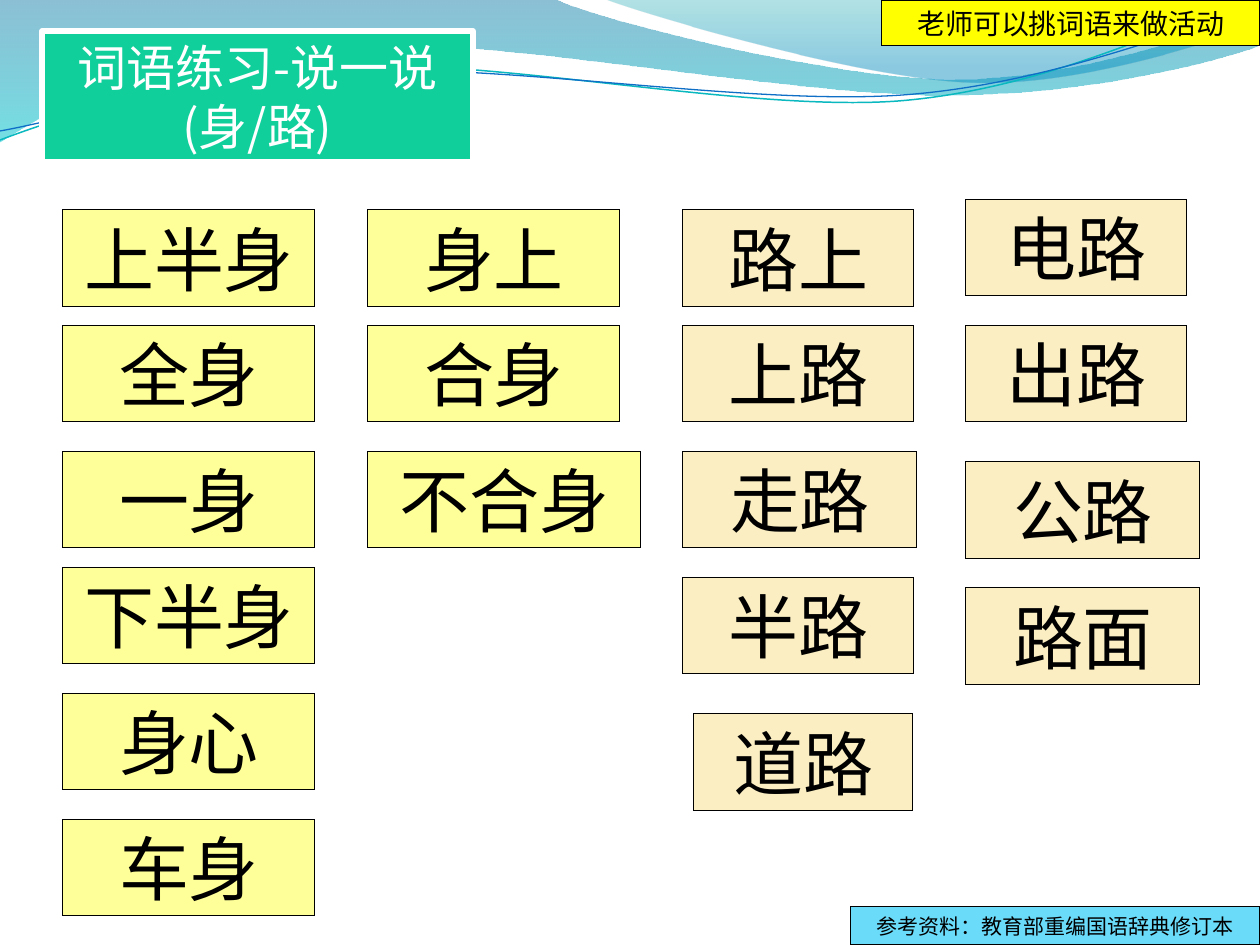
import pptx
import pptx.util
import pptx.dml.color
import pptx.enum.shapes
import pptx.enum.text
import pptx.oxml
import pptx.oxml.ns

PX = 914400 / 126
FACE = "Noto Sans CJK SC"
SPACE = pptx.oxml.ns.nsdecls("a")
YELLOW, CREAM = "FFFF99", "FAEEC2"
FRAME = {
    "word_wrap": True,
    "auto_size": pptx.enum.text.MSO_AUTO_SIZE.SHAPE_TO_FIT_TEXT,
    "vertical_anchor": pptx.enum.text.MSO_ANCHOR.TOP,
}
WORDS = [
    (YELLOW, 63, 252, [("上半身", 210), ("全身", 325), ("一身", 451),
                       ("下半身", 567), ("身心", 693), ("车身", 819)]),
    (YELLOW, 368, 252, [("身上", 210), ("合身", 325)]),
    (YELLOW, 368, 273, [("不合身", 451)]),
    (CREAM, 683, 231, [("路上", 210), ("上路", 325), ("半路", 577)]),
    (CREAM, 683, 234, [("走路", 451)]),
    (CREAM, 693, 220, [("道路", 714)]),
    (CREAM, 966, 221, [("电路", 199), ("出路", 325)]),
    (CREAM, 966, 234, [("公路", 462), ("路面", 588)]),
]
WAVES = [
    ([(0, 0), (554, -1), (600, 21, 837, 79, 955, 79),
      (1075, 79, 1207, 33, 1260, 11), (1261, 45),
      (1239, 55, 1096, 96, 940, 95), (783, 95, 481, 35, 324, 43),
      (163, 45, 58, 105, -1, 142)],
     [(0, "0074A1", 45), (100, "00C6CF", 55)]),
    ([(604, -1), (641, 14, 859, 78, 969, 82),
      (1079, 87, 1211, 40, 1260, 26), (1260, 0)],
     [(0, "00A1A9", 30), (80, "008BBF", 45)]),
]
CURVES = [
    ([(0, 140), (60, 117, 199, 72, 349, 66), (498, 59, 747, 112, 898, 101),
      (1050, 89, 1182, 19, 1257, -3)], "0AB8BF", 0.85),
    ([(0, 131), (59, 121, 207, 77, 357, 71), (508, 64, 752, 106, 903, 95),
      (1053, 84, 1186, 26, 1260, 8)], "0F6FC6", 0.75),
]


def px(num):
    """Turn pixels into EMU."""
    return pptx.util.Emu(round(num * PX))


def color(code):
    """Turn a hex string into a colour."""
    return pptx.dml.color.RGBColor.from_string(code)


def apply(item, values):
    """Set each attribute named in a dict."""
    for name, value in values.items():
        setattr(item, name, value)


def plain(shape):
    """Drop the theme style of a shape."""
    shape.element.remove(shape.element.find(pptx.oxml.ns.qn("p:style")))
    return shape


def bend(shape, step):
    """Return a cubic segment in the shape's own units."""
    pairs = zip(step[::2], step[1::2])
    marks = "".join(
        f'<a:pt x="{px(x) - shape.left}" y="{px(y) - shape.top}"/>' for x, y in pairs)
    return pptx.oxml.parse_xml(f"<a:cubicBezTo {SPACE}>{marks}</a:cubicBezTo>")


def outline(slide, steps, close):
    """Draw a freeform of straight and cubic segments."""
    first, *rest = [(px(step[-2]), px(step[-1])) for step in steps]
    pen = slide.shapes.build_freeform(*first)
    pen.add_line_segments(rest, close=close)
    shape = plain(pen.convert_to_shape())
    lines = list(shape.element.iter(pptx.oxml.ns.qn("a:lnTo")))
    for line, step in zip(lines, steps[1:]):
        if len(step) == 6:
            line.getparent().replace(line, bend(shape, step))
    return shape


def wave(slide, steps, stops):
    """Draw a band with a see-through vertical gradient."""
    shape = outline(slide, steps, True)
    shape.line.fill.background()
    marks = "".join(
        f'<a:gs pos="{pos * 1000}"><a:srgbClr val="{code}">'
        f'<a:alpha val="{alpha * 1000}"/></a:srgbClr></a:gs>'
        for pos, code, alpha in stops)
    fill = pptx.oxml.parse_xml(
        f'<a:gradFill {SPACE} rotWithShape="1"><a:gsLst>{marks}</a:gsLst>'
        '<a:lin ang="5400000" scaled="1"/></a:gradFill>')
    shape.element.spPr.find(pptx.oxml.ns.qn("a:custGeom")).addnext(fill)


def curve(slide, steps, code, width):
    """Draw an open curved line."""
    shape = outline(slide, steps, False)
    shape.fill.background()
    shape.line.color.rgb = color(code)
    shape.line.width = pptx.util.Pt(width)


def card(slide, text, box, fill, size, ink="000000", edge="000000", width=None):
    """Draw a filled rectangle with centred text."""
    shape = plain(slide.shapes.add_shape(
        pptx.enum.shapes.MSO_SHAPE.RECTANGLE, *map(px, box)))
    shape.fill.solid()
    shape.fill.fore_color.rgb = color(fill)
    shape.line.color.rgb = color(edge)
    if width:
        shape.line.width = pptx.util.Pt(width)
    apply(shape.text_frame, FRAME)
    para = shape.text_frame.paragraphs[0]
    para.alignment = pptx.enum.text.PP_ALIGN.CENTER
    run = para.add_run()
    run.text = text
    apply(run.font, {"name": FACE, "size": pptx.util.Pt(size)})
    run.font.color.rgb = color(ink)
    east = pptx.oxml.parse_xml(f'<a:ea {SPACE} typeface="{FACE}"/>')
    run.font._element.find(pptx.oxml.ns.qn("a:latin")).addnext(east)


def main():
    """Build and save the slide."""
    deck = pptx.Presentation()
    apply(deck, {"slide_width": px(1260), "slide_height": px(945)})
    slide = deck.slides.add_slide(deck.slide_layouts[6])
    for steps, stops in WAVES:
        wave(slide, steps, stops)
    for steps, code, width in CURVES:
        curve(slide, steps, code, width)
    for fill, left, width, items in WORDS:
        for text, top in items:
            card(slide, text, (left, top, width, 97), fill, 40)
    card(slide, "词语练习-说一说(身/路)", (42, 31, 431, 131),
         "10CF9B", 28, "FFFFFF", "FFFFFF", 3)
    card(slide, "参考资料：教育部重编国语辞典修订本", (850, 907, 410, 38), "6BDBFA", 12)
    card(slide, "老师可以挑词语来做活动", (882, 0, 378, 46), "FFFF00", 16)
    deck.save("out.pptx")


if __name__ == "__main__":
    main()
